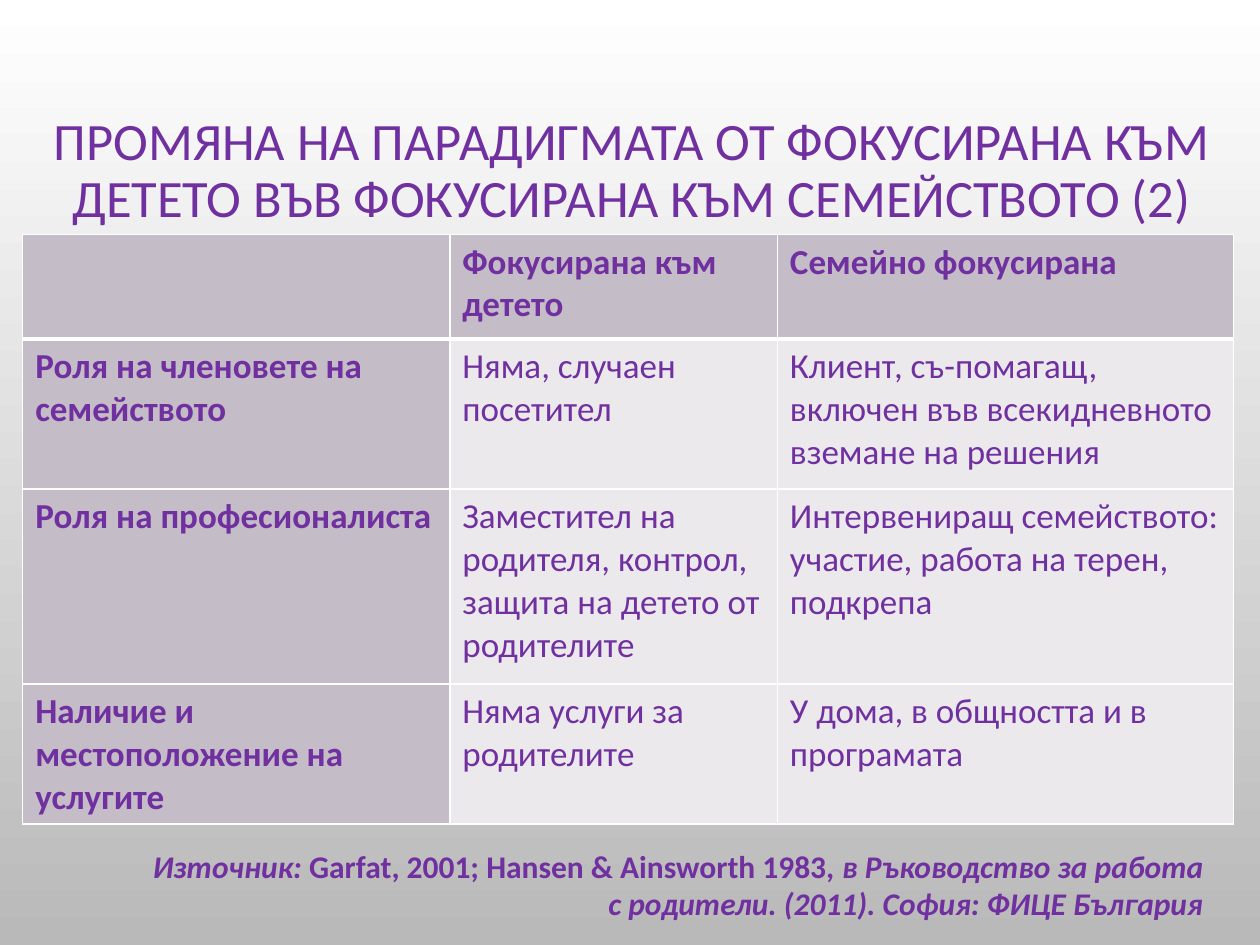
from lxml import etree
from pptx import Presentation
from pptx.dml.color import RGBColor
from pptx.enum.text import MSO_ANCHOR, PP_ALIGN
from pptx.oxml.ns import qn
from pptx.util import Inches, Pt

CENTER, RIGHT, LEFT = PP_ALIGN.CENTER, PP_ALIGN.RIGHT, PP_ALIGN.LEFT
TOP, MIDDLE = MSO_ANCHOR.TOP, MSO_ANCHOR.MIDDLE
PURPLE, WHITE, GREY = "7030A0", "FFFFFF", "B9B9B9"
HEADING_FILL, BODY_FILL = "C4BCC6", "EBE9EC"

TITLE = "ПРОМЯНА НА ПАРАДИГМАТА ОТ ФОКУСИРАНА КЪМ ДЕТЕТО ВЪВ ФОКУСИРАНА КЪМ СЕМЕЙСТВОТО (2)"
COLUMNS = [3.39, 2.6, 3.62]
HEIGHTS = [0.83, 1.19, 1.55, 1.11]
ROWS = [
    ["", "Фокусирана към детето", "Семейно фокусирана"],
    ["Роля на членовете на семейството", "Няма, случаен посетител",
     "Клиент, съ-помагащ, включен във всекидневното вземане на решения"],
    ["Роля на професионалиста",
     "Заместител на родителя, контрол, защита на детето от родителите",
     "Интервениращ семейството: участие, работа на терен, подкрепа"],
    ["Наличие и местоположение на услугите", "Няма услуги за родителите",
     "У дома, в общността и в програмата"],
]
SOURCE = [
    ("Източник: ", True),
    ("Garfat, 2001; Hansen & Ainsworth 1983, ", False),
    ("в Ръководство за работа с родители. (2011). София: ФИЦЕ България", True),
]


def rgb(color):
    return RGBColor.from_string(color)


def add_run(p, text, size=20, bold=False, italic=False, color=PURPLE):
    r = p.add_run()
    r.text = text
    r.font.name = "Calibri"
    r.font.size = Pt(size)
    r.font.bold = bold
    r.font.italic = italic
    r.font.color.rgb = rgb(color)


def add_box(s, left, top, width, height, align=LEFT, anchor=TOP):
    sp = s.shapes.add_textbox(Inches(left), Inches(top), Inches(width), Inches(height))
    tf = sp.text_frame
    tf.word_wrap = True
    tf.vertical_anchor = anchor
    p = tf.paragraphs[0]
    p.alignment = align
    return p


def set_border(cell, side, width, color=WHITE):
    ln = etree.SubElement(cell._tc.get_or_add_tcPr(), qn(f"a:ln{side}"), w=str(Pt(width)))
    fill = etree.SubElement(ln, qn("a:solidFill"))
    etree.SubElement(fill, qn("a:srgbClr"), val=color)


def format_cell(cell, text, row, column):
    heading = row == 0 or column == 0
    widths = {"L": 1, "R": 1, "T": 3 if row == 1 else 1, "B": 3 if row == 0 else 1}
    for side, width in widths.items():
        set_border(cell, side, width)
    cell.fill.solid()
    cell.fill.fore_color.rgb = rgb(HEADING_FILL if heading else BODY_FILL)
    if text:
        add_run(cell.text_frame.paragraphs[0], text, bold=heading)


def add_comparison(s, left, top):
    table = s.shapes.add_table(
        len(ROWS), len(COLUMNS), Inches(left), Inches(top),
        Inches(sum(COLUMNS)), Inches(sum(HEIGHTS))).table
    for column, width in zip(table.columns, COLUMNS):
        column.width = Inches(width)
    for i, (height, texts) in enumerate(zip(HEIGHTS, ROWS)):
        table.rows[i].height = Inches(height)
        for j, text in enumerate(texts):
            format_cell(table.cell(i, j), text, i, j)


def set_background(s, start, end):
    fill = s.background.fill
    fill.gradient()
    fill.gradient_angle = 270
    for stop, color in zip(fill.gradient_stops, (start, end)):
        stop.color.rgb = rgb(color)


def main():
    prs = Presentation()
    prs.slide_width, prs.slide_height = Inches(10), Inches(7.5)
    s = prs.slides.add_slide(prs.slide_layouts[6])
    set_background(s, WHITE, GREY)

    p = add_box(s, 0.21, 0.49, 9.61, 1.75, align=CENTER, anchor=MIDDLE)
    p.line_spacing = 0.9
    add_run(p, TITLE, size=30)

    add_comparison(s, 0.18, 1.86)

    p = add_box(s, 1.06, 6.67, 8.59, 0.71, align=RIGHT)
    for text, italic in SOURCE:
        add_run(p, text, size=18, bold=True, italic=italic)

    prs.save("out.pptx")


if __name__ == "__main__":
    main()
